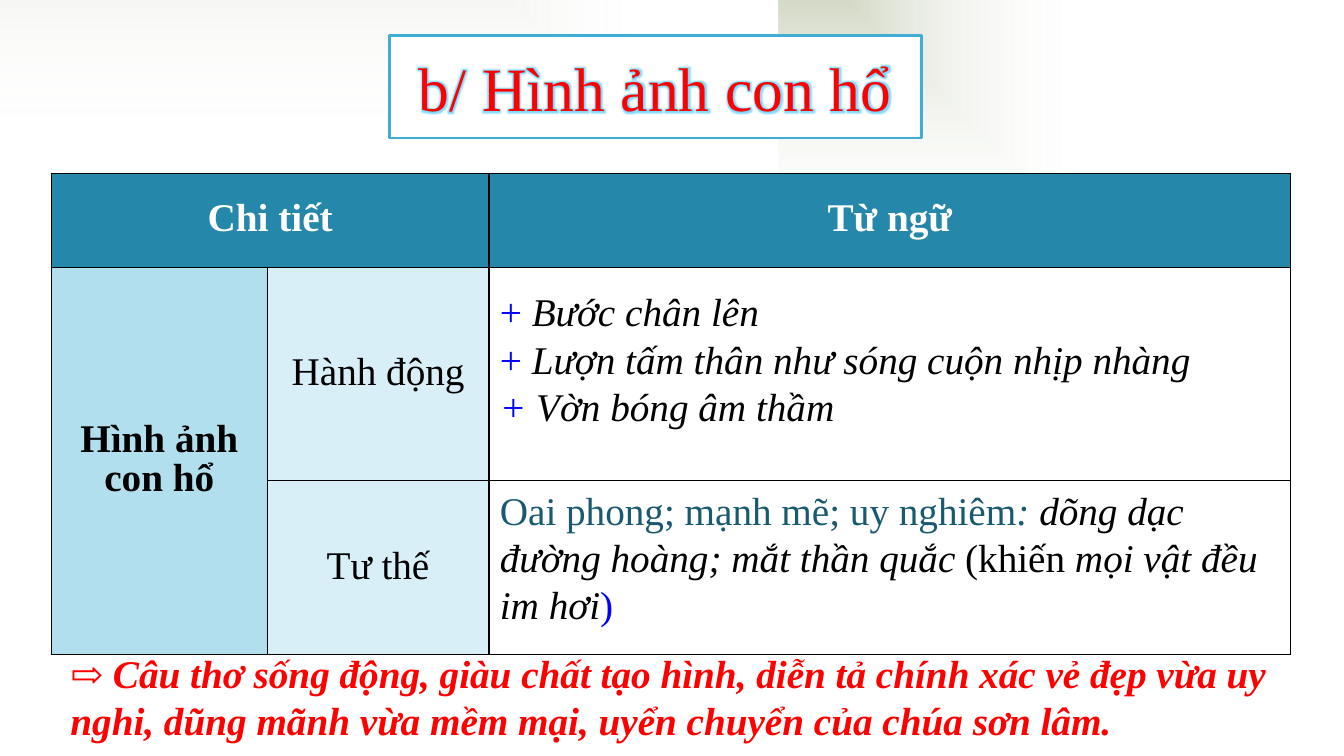
from lxml import etree
from pptx import Presentation
from pptx.dml.color import RGBColor
from pptx.enum.shapes import MSO_SHAPE
from pptx.enum.text import MSO_ANCHOR, PP_ALIGN
from pptx.oxml import parse_xml
from pptx.oxml.ns import nsdecls, qn
from pptx.util import Inches, Pt

RECT = MSO_SHAPE.RECTANGLE
MIDDLE = MSO_ANCHOR.MIDDLE
LEFT, CENTER, JUSTIFY = PP_ALIGN.LEFT, PP_ALIGN.CENTER, PP_ALIGN.JUSTIFY
FONT = "Times New Roman"

COLORS = {
    "white": "FFFFFF", "black": "000000", "red": "FF0000", "blue": "0000FF",
    "teal": "195A71", "header": "2587AA", "subject": "B2DFEE",
    "aspect": "D9EFF7", "frame": "3FAED5", "glow": "7FDBFF", "sage": "CBD2BC",
}

# Each run: text, colour, style letters (b = bold, i = italic)
TITLE = [("b/ Hình ảnh con hổ", "red", "")]
COLUMNS = [2.14, 2.2, 7.95]
ROWS = [0.93, 2.12, 1.72]
# Each cell: row, column, run, fill
CELLS = [
    (0, 0, ("Chi tiết", "white", "b"), "header"),
    (0, 2, ("Từ ngữ", "white", "b"), "header"),
    (1, 0, ("Hình ảnh con hổ", "black", "b"), "subject"),
    (1, 1, ("Hành động", "black", ""), "aspect"),
    (2, 1, ("Tư thế", "black", ""), "aspect"),
]
MERGES = [((0, 0), (0, 1)), ((1, 0), (2, 0))]
ACTIONS = [
    (LEFT, [("+ ", "blue", ""), ("Bước chân lên", "black", "i")]),
    (JUSTIFY, [("+ ", "blue", ""),
               ("Lượn tấm thân như sóng cuộn nhịp nhàng", "black", "i")]),
    (JUSTIFY, [("+ ", "blue", "i"), ("Vờn bóng âm thầm", "black", "i")]),
]
POSTURE = [(LEFT, [
    ("Oai phong; mạnh mẽ; uy nghiêm", "teal", ""),
    (": ", "teal", "i"),
    ("dõng dạc đường hoàng; mắt thần quắc ", "black", "i"),
    ("(khiến ", "black", ""),
    ("mọi vật đều im hơi", "black", "i"),
    (")", "blue", ""),
])]
CONCLUSION = [(LEFT, [(
    "⇨ Câu thơ sống động, giàu chất tạo hình, diễn tả chính xác vẻ đẹp vừa uy "
    "nghi, dũng mãnh vừa mềm mại, uyển chuyển của chúa sơn lâm.", "red", "bi")])]
NOTES = [
    ((4.86, 2.8, 7.95, 1.51), ACTIONS),
    ((4.86, 4.77, 8.04, 1.51), POSTURE),
    ((0.6, 6.39, 12.21, 1.04), CONCLUSION),
]
# Each corner shade: box, opacity in percent, mirrored
SHADES = [((7.72, 0, 5.62, 5.17), 100, True), ((0, 0, 9.78, 6.42), 70, False)]


def rgb(name):
    return RGBColor.from_string(COLORS[name])


def add_runs(paragraph, runs, size=28):
    for text, color, style in runs:
        run = paragraph.add_run()
        run.text = text
        font = run.font
        font.name, font.size = FONT, Pt(size)
        font.bold, font.italic = "b" in style, "i" in style
        font.color.rgb = rgb(color)


def add_shade(slide, box, opacity, mirrored):
    shade = slide.shapes.add_shape(RECT, *map(Inches, box))
    shade.shadow.inherit = False
    shade.line.fill.background()
    properties = shade._element.spPr
    if mirrored:
        properties.find(qn("a:xfrm")).set("flipH", "1")
    properties.find(qn("a:prstGeom")).addnext(parse_xml(
        f'<a:gradFill {nsdecls("a")} rotWithShape="1"><a:gsLst>'
        f'<a:gs pos="0"><a:srgbClr val="{COLORS["sage"]}">'
        f'<a:alpha val="{opacity * 1000}"/></a:srgbClr></a:gs>'
        f'<a:gs pos="100000"><a:srgbClr val="{COLORS["white"]}">'
        '<a:alpha val="0"/></a:srgbClr></a:gs></a:gsLst>'
        '<a:path path="rect"><a:fillToRect r="100000" b="100000"/></a:path>'
        '</a:gradFill>'))


def add_title(slide):
    title = slide.shapes.title
    title.left, title.top, title.width, title.height = map(
        Inches, (3.86, 0.35, 5.28, 1.02))
    title._element.spPr.append(parse_xml(
        f'<a:prstGeom {nsdecls("a")} prst="roundRect"><a:avLst/></a:prstGeom>'))
    title.fill.solid()
    title.fill.fore_color.rgb = rgb("white")
    title.line.color.rgb = rgb("frame")
    title.line.width = Pt(2)
    title.text_frame.vertical_anchor = MIDDLE
    paragraph = title.text_frame.paragraphs[0]
    paragraph.alignment = CENTER
    add_runs(paragraph, TITLE, 44)
    paragraph.runs[0].font._element.find(qn("a:solidFill")).addnext(parse_xml(
        f'<a:effectLst {nsdecls("a")}><a:glow rad="63500">'
        f'<a:srgbClr val="{COLORS["glow"]}"/></a:glow></a:effectLst>'))
    # Bring the title in front of the corner shades
    title._element.getparent().append(title._element)


def set_borders(cell):
    properties = cell._tc.get_or_add_tcPr()
    for position, side in enumerate(("lnL", "lnR", "lnT", "lnB")):
        line = etree.Element(qn(f"a:{side}"), w=str(Pt(1)))
        fill = etree.SubElement(line, qn("a:solidFill"))
        etree.SubElement(fill, qn("a:srgbClr"), val=COLORS["black"])
        properties.insert(position, line)


def add_detail_table(slide):
    table = slide.shapes.add_table(
        len(ROWS), len(COLUMNS), Inches(0.51), Inches(1.72),
        Inches(sum(COLUMNS)), Inches(sum(ROWS))).table
    for column, width in zip(table.columns, COLUMNS):
        column.width = Inches(width)
    for row, height in zip(table.rows, ROWS):
        row.height = Inches(height)
    for first, last in MERGES:
        table.cell(*first).merge(table.cell(*last))
    for cell in table.iter_cells():
        cell.fill.solid()
        cell.fill.fore_color.rgb = rgb("white")
        set_borders(cell)
    for row, column, run, fill in CELLS:
        cell = table.cell(row, column)
        cell.fill.fore_color.rgb = rgb(fill)
        cell.vertical_anchor = MIDDLE
        paragraph = cell.text_frame.paragraphs[0]
        paragraph.alignment = CENTER
        paragraph.line_spacing = 0.9
        add_runs(paragraph, [run])


def add_note(slide, box, paragraphs):
    frame = slide.shapes.add_textbox(*map(Inches, box)).text_frame
    frame.word_wrap = True
    frame.vertical_anchor = MIDDLE
    for index, (alignment, runs) in enumerate(paragraphs):
        paragraph = frame.add_paragraph() if index else frame.paragraphs[0]
        paragraph.alignment = alignment
        add_runs(paragraph, runs)


def main():
    deck = Presentation()
    deck.slide_width, deck.slide_height = Inches(13.33), Inches(7.5)
    slide = deck.slides.add_slide(deck.slide_layouts[5])
    for shade in SHADES:
        add_shade(slide, *shade)
    add_title(slide)
    add_detail_table(slide)
    for box, paragraphs in NOTES:
        add_note(slide, box, paragraphs)
    deck.save("out.pptx")


if __name__ == "__main__":
    main()
